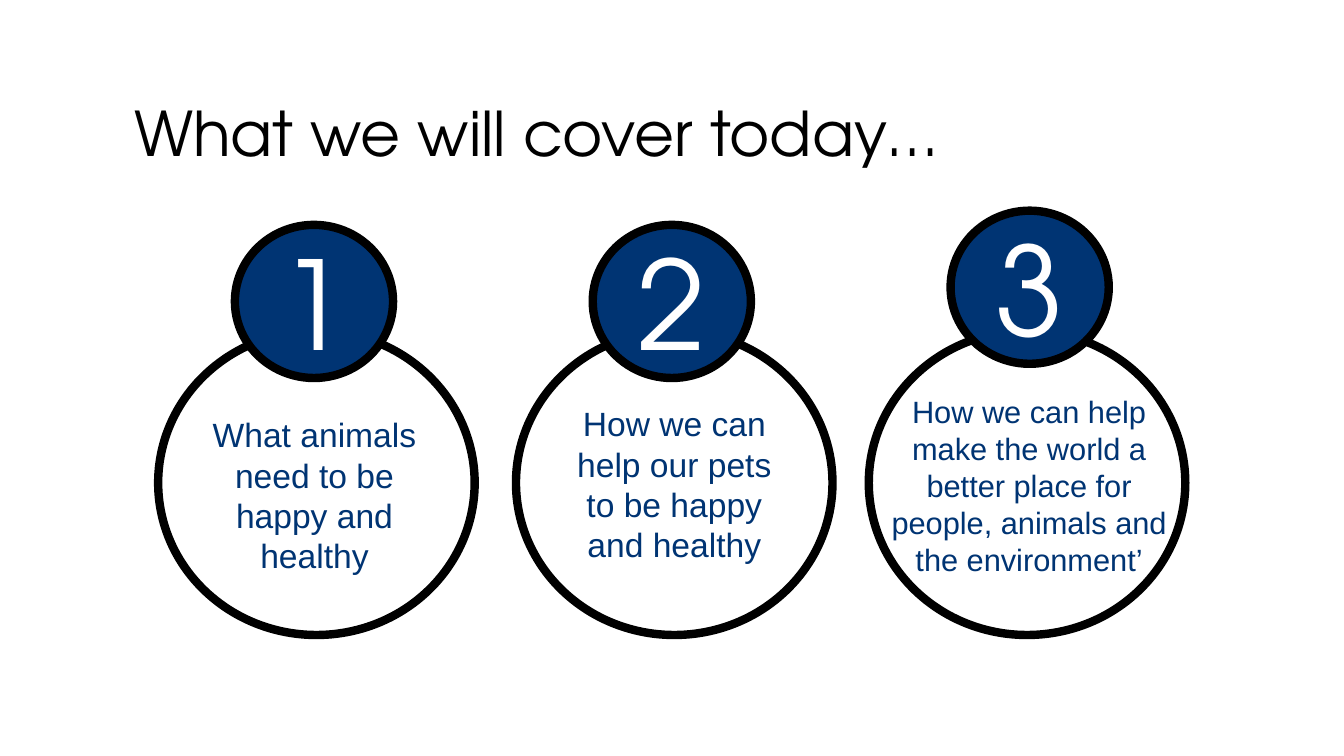
"""Build the agenda slide with three numbered topic circles."""
from dataclasses import dataclass

from pptx import Presentation
from pptx.dml.color import RGBColor
from pptx.enum.shapes import MSO_SHAPE
from pptx.enum.text import MSO_ANCHOR, PP_ALIGN
from pptx.util import Pt


@dataclass(frozen=True)
class Theme:
    black: RGBColor = RGBColor(0, 0, 0)
    white: RGBColor = RGBColor(255, 255, 255)
    navy: RGBColor = RGBColor(0, 0x34, 0x73)
    display_font: str = "TeX Gyre Adventor"
    body_font: str = "Arial"
    title_size: int = 44
    number_size: int = 88
    topic_size: int = 24
    long_topic_size: int = 22
    outline: int = 6


theme = Theme()


def write(text_frame, text, font_name, size, color, alignment):
    text_frame.word_wrap = True
    paragraph = text_frame.paragraphs[0]
    paragraph.text = text
    paragraph.alignment = alignment
    paragraph.font.name = font_name
    paragraph.font.size = Pt(size)
    paragraph.font.color.rgb = color
    return paragraph


def add_circle(left, top, width, height, fill):
    circle = slide.shapes.add_shape(
        MSO_SHAPE.OVAL, Pt(left), Pt(top), Pt(width), Pt(height))
    circle.shadow.inherit = False
    circle.fill.solid()
    circle.fill.fore_color.rgb = fill
    circle.line.color.rgb = theme.black
    circle.line.width = Pt(theme.outline)
    return circle


presentation = Presentation()
presentation.slide_width = Pt(960)
presentation.slide_height = Pt(540)
slide = presentation.slides.add_slide(presentation.slide_layouts[5])

title = slide.shapes.title
title.left, title.top, title.width, title.height = Pt(88.6), Pt(62.6), Pt(773.3), Pt(70.6)
title.text_frame.vertical_anchor = MSO_ANCHOR.MIDDLE
heading = write(title.text_frame, "What we will cover today…", theme.display_font,
                theme.title_size, theme.black, PP_ALIGN.LEFT)
heading.line_spacing = 0.9

topics = [
    ("What animals need to be happy and healthy", theme.topic_size,
     113, (167.8, 160.6), (139.7, 292.3, 169.9, 145.4)),
    ("How we can help our pets to be happy and healthy", theme.topic_size,
     368.6, (423.4, 160.6), (396.7, 284.4, 169.9, 145.4)),
    ("How we can help make the world a better place for people, animals "
     "and the environment’", theme.long_topic_size,
     620.6, (679, 150.5), (623.5, 277.2, 223.2, 140.4)),
]

for number, (topic, size, circle_left, badge_corner, text_area) in enumerate(topics, 1):
    add_circle(circle_left, 236.2, 226.1, 217.4, theme.white)

    badge = add_circle(*badge_corner, 113, 109.4, theme.navy)
    badge.text_frame.vertical_anchor = MSO_ANCHOR.MIDDLE
    write(badge.text_frame, str(number), theme.display_font,
          theme.number_size, theme.white, PP_ALIGN.CENTER)

    caption = slide.shapes.add_textbox(*map(Pt, text_area))
    write(caption.text_frame, topic, theme.body_font, size, theme.navy, PP_ALIGN.CENTER)

presentation.save("out.pptx")
